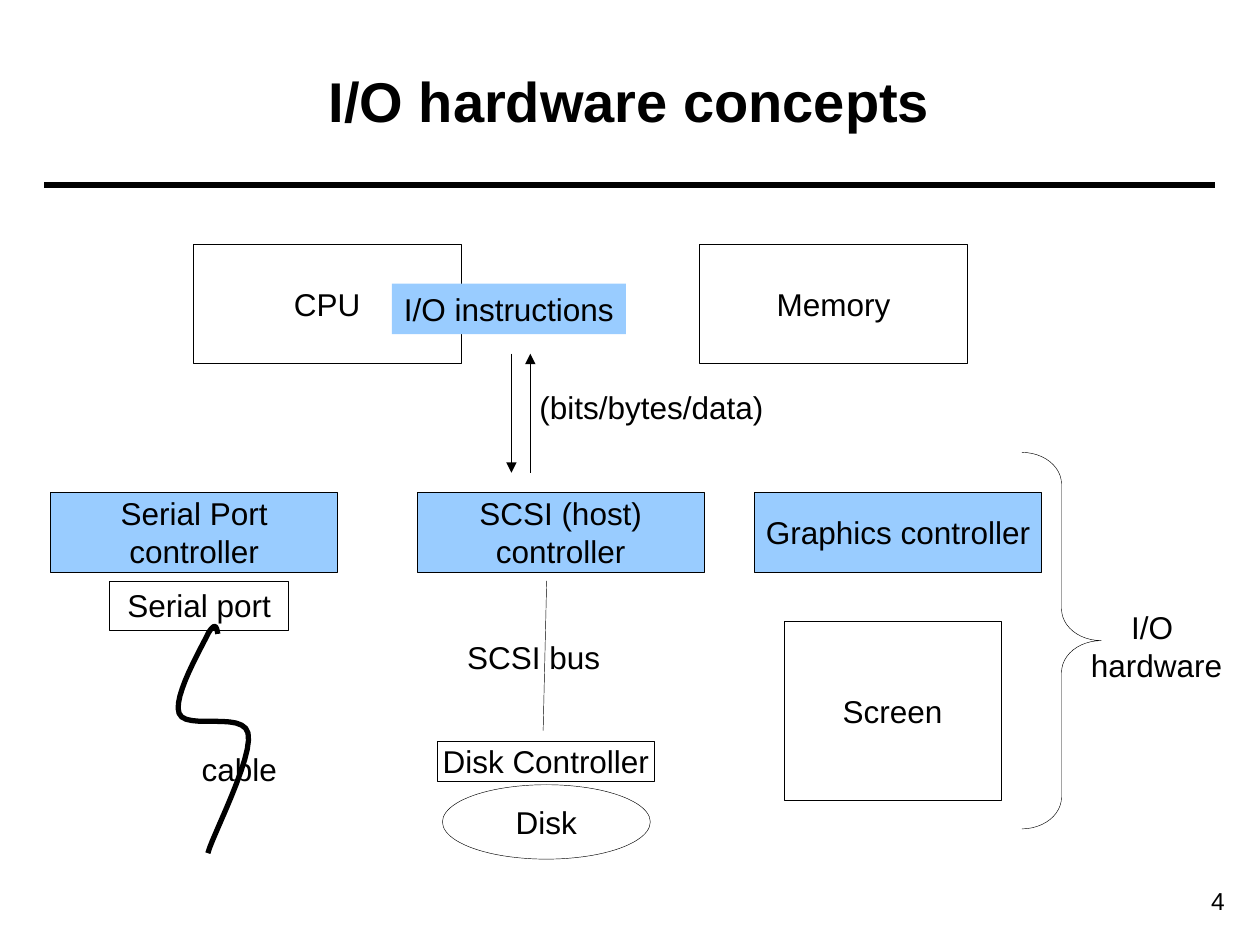
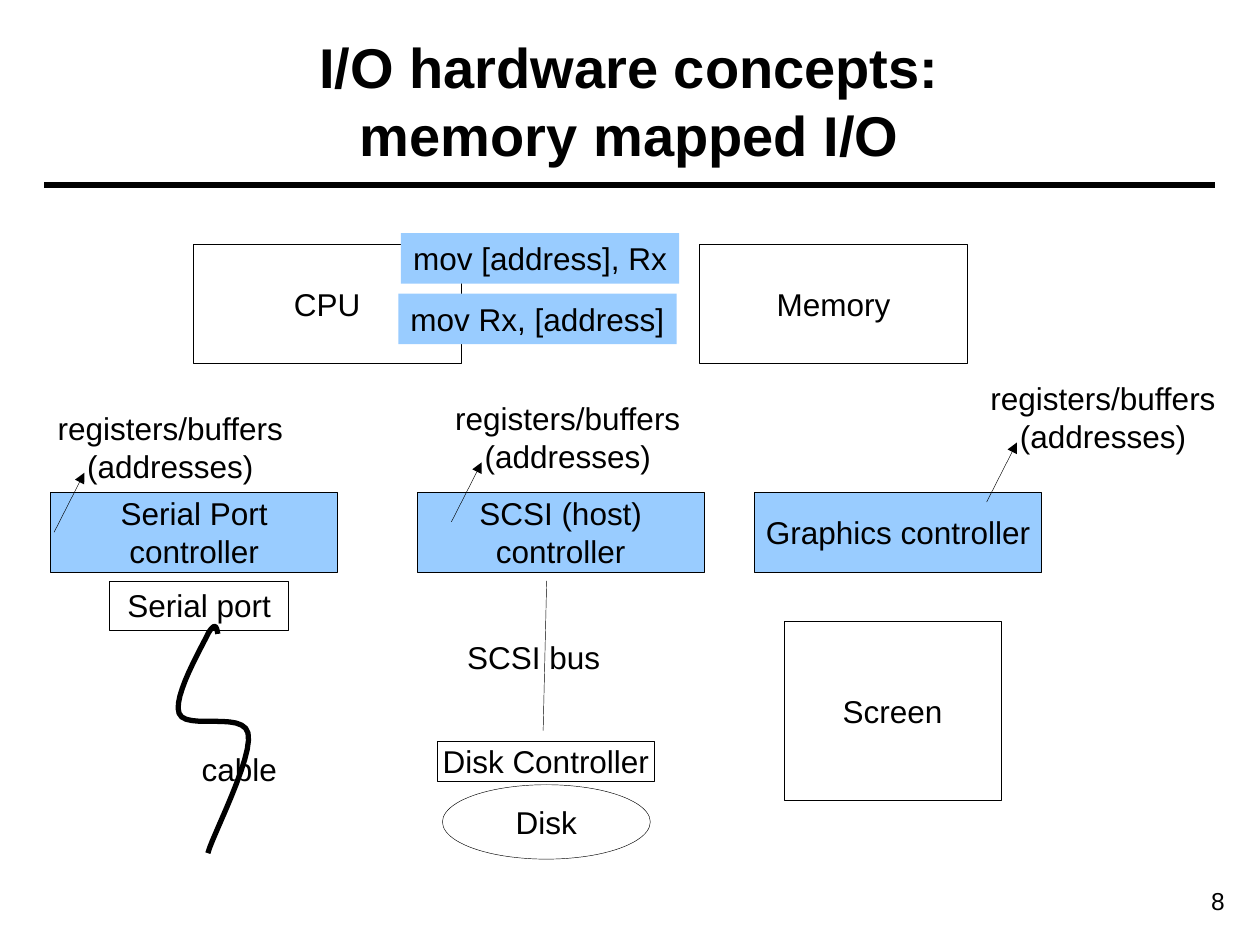
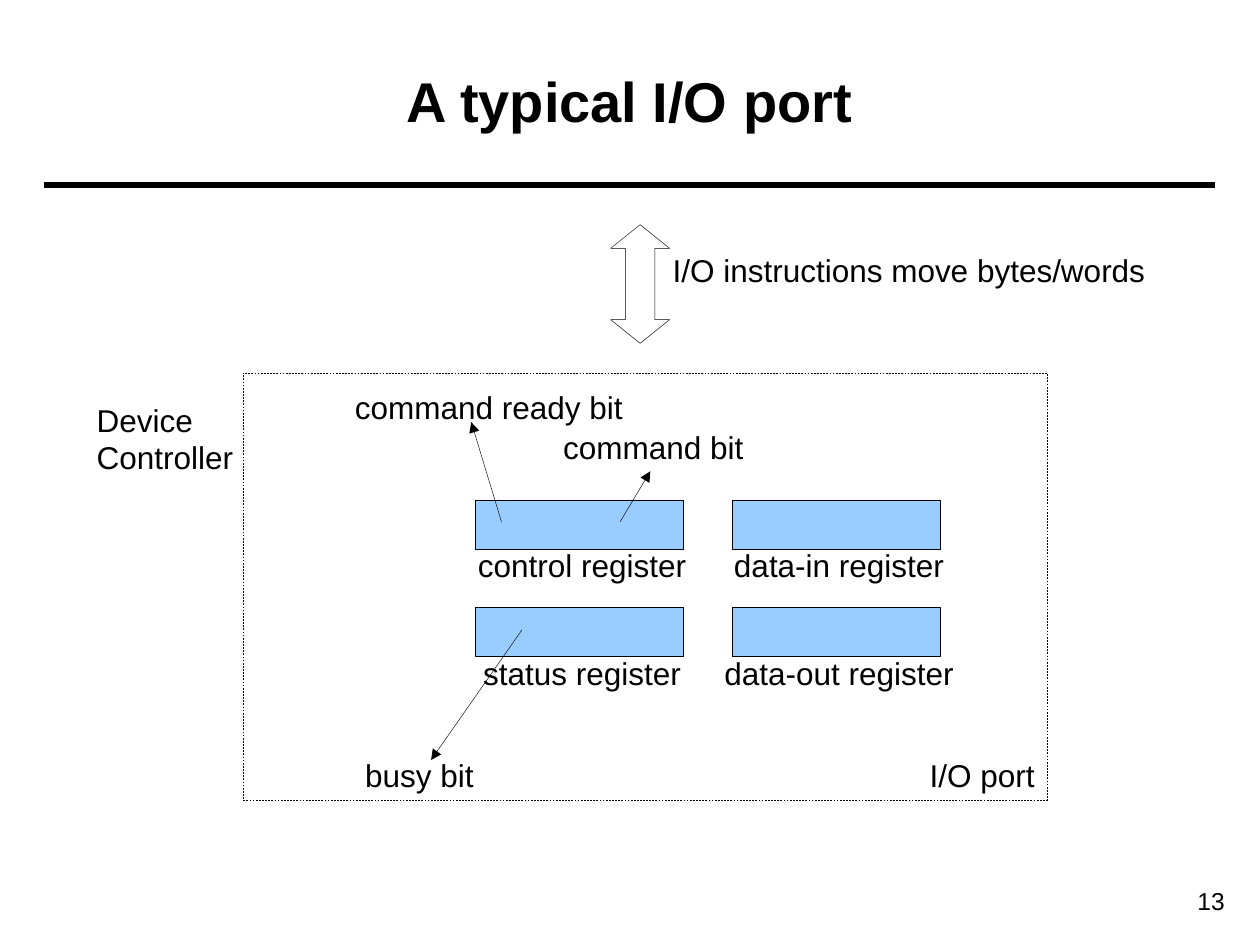
from dataclasses import dataclass
from typing import Any

from lxml import etree
from pptx import Presentation
from pptx import util as u
from pptx.dml.color import RGBColor
from pptx.enum import dml, shapes, text
from pptx.oxml.ns import qn

COLOURS = {"ink": "000000", "accent": "99CCFF"}
FONT = "Arial"
THIN, THICK = 0.25, 3
LINE_HEIGHT, TWO_LINES = 1.02, 1.78
CONTROLLER = (5.79, 1.6)
CHIP_HEIGHT = 1.02
CENTRE, LEFT, RIGHT = text.PP_ALIGN.CENTER, text.PP_ALIGN.LEFT, text.PP_ALIGN.RIGHT
MIDDLE, TOP = text.MSO_ANCHOR.MIDDLE, text.MSO_ANCHOR.TOP
RECT, OVAL = shapes.MSO_SHAPE.RECTANGLE, shapes.MSO_SHAPE.OVAL


def colour(name):
    return RGBColor.from_string(COLOURS[name])


def write(shape, words, size=18, bold=False, align=CENTRE, anchor=MIDDLE, wrap=False):
    """Fill a shape: a tuple gives paragraphs, a newline gives a line break."""
    frame = shape.text_frame
    frame.word_wrap = wrap
    frame.auto_size = text.MSO_AUTO_SIZE.NONE
    frame.vertical_anchor = anchor
    paragraphs = words if isinstance(words, tuple) else (words,)
    for index, content in enumerate(paragraphs):
        para = frame.add_paragraph() if index else frame.paragraphs[0]
        para.alignment = align
        for row, line in enumerate(content.split("\n")):
            if row:
                para.add_line_break()
            span = para.add_run()
            span.text = line
            span.font.name, span.font.size, span.font.bold = FONT, u.Pt(size), bold
            span.font.color.rgb = colour("ink")


def stroke(item, weight=THIN):
    item.line.color.rgb = colour("ink")
    item.line.width = u.Pt(weight)


@dataclass
class Region:
    """Places parts in centimetres from its own top left corner."""
    page: Any
    left: float
    top: float

    def at(self, x, y):
        return u.Cm(self.left + x), u.Cm(self.top + y)

    def block(self, x, y, width, height, words="", fill=None, kind=RECT,
              outline=True, **style):
        box = self.page.shapes.add_shape(
            kind, *self.at(x, y), u.Cm(width), u.Cm(height))
        box.shadow.inherit = False
        if fill:
            box.fill.solid()
            box.fill.fore_color.rgb = colour(fill)
        else:
            box.fill.background()
        if outline:
            stroke(box)
        else:
            box.line.fill.background()
        if words:
            write(box, words, **style)
        return box

    def chip(self, x, y, width, words, align=CENTRE):
        self.block(x, y, width, CHIP_HEIGHT, words, "accent", outline=False,
                   align=align, anchor=TOP)

    def label(self, x, y, width, words, height=LINE_HEIGHT, **style):
        box = self.page.shapes.add_textbox(
            *self.at(x, y), u.Cm(width), u.Cm(height))
        write(box, words, anchor=TOP, **style)

    def line(self, start, end, arrow=False, weight=THIN):
        link = self.page.shapes.add_connector(
            shapes.MSO_CONNECTOR.STRAIGHT, *self.at(*start), *self.at(*end))
        stroke(link, weight)
        if arrow:
            etree.SubElement(link.line._get_or_add_ln(), qn("a:tailEnd"), type="triangle")
        etree.SubElement(link._element.spPr, qn("a:effectLst"))
        return link

    def curve(self, points, weight, steps=12):
        """Draw joined cubic curves; every third point is a joint."""
        trail = []
        for first in range(0, len(points) - 1, 3):
            a, b, c, d = points[first:first + 4]
            for step in range(1, steps + 1):
                t = step / steps
                s = 1 - t
                trail.append(self.at(*(
                    s**3 * a[i] + 3 * s * s * t * b[i] + 3 * s * t * t * c[i] + t**3 * d[i]
                    for i in (0, 1))))
        builder = self.page.shapes.build_freeform(*self.at(*points[0]))
        builder.add_line_segments(trail, close=False)
        path_shape = builder.convert_to_shape()
        path_shape.shadow.inherit = False
        path_shape.fill.background()
        stroke(path_shape, weight)


# Shared frame: title, rule and page number

def prepare_layout(deck):
    layout = deck.slide_layouts.get_by_name("Title Only")
    title = layout.placeholders[0]
    title.left, title.top = u.Cm(0.89), u.Cm(0.43)
    title.width, title.height = u.Cm(23.6), u.Cm(3.18)
    return layout


def add_page(deck, layout, heading, number):
    page = deck.slides.add_slide(layout)
    write(page.shapes.title, heading, size=32, bold=True, wrap=True)
    frame = Region(page, 0, 0)
    rule = frame.line((0.89, 3.73), (24.49, 3.73), weight=THICK)
    if number == FIRST_NUMBER:  # the rule moves to the layout that all pages share
        layout.shapes._spTree.append(rule._element)
    else:
        rule._element.getparent().remove(rule._element)
    frame.label(22.3, 17.73, 2.64, str(number), height=0.86, size=14,
                align=RIGHT, wrap=True)
    return page


FIRST_NUMBER = 4


# Hardware diagram

def serial_column(region):
    region.block(1.19, 1.78, 3.61, 0.99, "Serial port")
    region.block(0, 0, *CONTROLLER, "Serial Port\ncontroller", "accent")
    region.curve([(3.37, 2.85), (3.35, 2.72), (3.32, 2.59), (3.17, 2.85),
                  (3.04, 3.13), (2.46, 4.12), (2.59, 4.45),
                  (2.71, 4.8), (3.88, 4.4), (3.98, 4.85),
                  (4.09, 5.34), (3.25, 6.94), (3.17, 7.27)], THICK)
    region.label(2.79, 5.06, 2.03, "cable")


def scsi_column(region):
    region.block(0, 0, *CONTROLLER, ("SCSI (host)", "controller"), "accent")
    region.line((2.61, 1.78), (2.54, 4.8))
    region.label(0.76, 2.8, 3.18, "SCSI bus")
    region.block(0.51, 5.89, 4.19, 1.5, "Disk", kind=OVAL)
    region.block(0.4, 5.01, 4.39, 0.81, "Disk Controller")


def graphics_column(region):
    region.block(0, 0, *CONTROLLER, "Graphics controller", "accent")
    region.block(0.59, 2.59, 4.39, 3.61, "Screen")


def processor_row(region, chips):
    for x, words in ((0, "CPU"), (10.21, "Memory")):
        region.block(x, 0, 5.41, 2.39, words)
    for chip in chips:
        region.chip(*chip)


def hardware(page, chips):
    columns = ((1.02, serial_column), (8.41, scsi_column), (15.21, graphics_column))
    for left, draw in columns:
        draw(Region(page, left, 9.93))
    processor_row(Region(page, 3.89, 4.93), chips)


def data_traffic(region):
    region.line((0, 0), (0, 2.4), arrow=True)
    region.line((0.38, 2.4), (0.38, 0), arrow=True)
    region.label(0.31, 0.57, 5.03, "(bits/bytes/data)")


def hardware_brace(region):
    region.label(1.14, 3.02, 3.15, "I/O \nhardware", height=TWO_LINES)
    brace = region.block(0, 0, 1.6, 7.59, kind=shapes.MSO_SHAPE.RIGHT_BRACE)
    brace.adjustments[0], brace.adjustments[1] = 0.4, 0.5


def register_note(region):
    region.line((0.18, 2.6), (0.79, 1.4), arrow=True)
    region.label(0, 0, 5.05, "registers/buffers\n(addresses)", height=TWO_LINES)


# Port diagram

def registers(region):
    names = ((("control register", 4.7), ("data-in register", 4.72)),
             (("status register", 4.5), ("data-out register", 5.13)))
    width, height, column_step, row_step = 4.19, 0.99, 5.18, 2.17
    for row, pair in enumerate(names):
        for column, (name, label_width) in enumerate(pair):
            x, y = column * column_step, row * row_step
            region.block(x, y, width, height, fill="accent")
            region.label(x + (width - label_width) / 2 + 0.06, y + 0.81,
                         label_width, name)


def port(region):
    registers(Region(region.page, region.left + 4.68, region.top + 2.56))
    bits = (("busy bit", (2.21, 7.59, 2.69), (5.62, 5.18), (3.79, 7.8)),
            ("command ready bit", (2.01, 0.18, 5.89), (5.21, 3), (4.6, 0.99)),
            ("command bit", (6.2, 0.99, 4.14), (7.6, 3), (8.21, 1.98)))
    for name, place, start, end in bits:
        region.line(start, end, arrow=True)
        region.label(*place, name)
    border = region.block(0, 0, 16.21, 8.61)
    border.line.dash_style = dml.MSO_LINE.DASH
    region.label(13.59, 7.59, 2.62, "I/O port")
    region.label(-3.2, 0.43, 3.25, "Device\nController", height=TWO_LINES, align=LEFT)


def port_traffic(region):
    arrow = region.block(0, 0.2, 2.39, 1.19, kind=shapes.MSO_SHAPE.LEFT_RIGHT_ARROW)
    arrow.rotation = 270
    arrow.adjustments[0], arrow.adjustments[1] = 0.5, 0.4
    region.label(1.6, 0, 10.03, "I/O instructions move bytes/words")


def main():
    deck = Presentation()
    deck.slide_width, deck.slide_height = u.Cm(25.4), u.Cm(19.05)
    layout = prepare_layout(deck)

    page = add_page(deck, layout, "I/O hardware concepts", FIRST_NUMBER)
    hardware(page, [(4.01, 0.79, 4.72, "I/O instructions")])
    hardware_brace(Region(page, 20.6, 9.12))
    data_traffic(Region(page, 10.31, 7.13))

    page = add_page(deck, layout, "I/O hardware concepts:\nmemory mapped I/O", 8)
    hardware(page, [(4.19, -0.23, 5.61, "mov [address], Rx", LEFT),
                    (4.14, 0.99, 5.61, "mov Rx, [address]")])
    for left, top in ((19.71, 7.52), (8.92, 7.92), (0.91, 8.13)):
        register_note(Region(page, left, top))

    page = add_page(deck, layout, "A typical I/O port", 13)
    port(Region(page, 4.9, 7.52))
    port_traffic(Region(page, 11.71, 4.93))

    deck.save("out.pptx")


if __name__ == "__main__":
    main()
